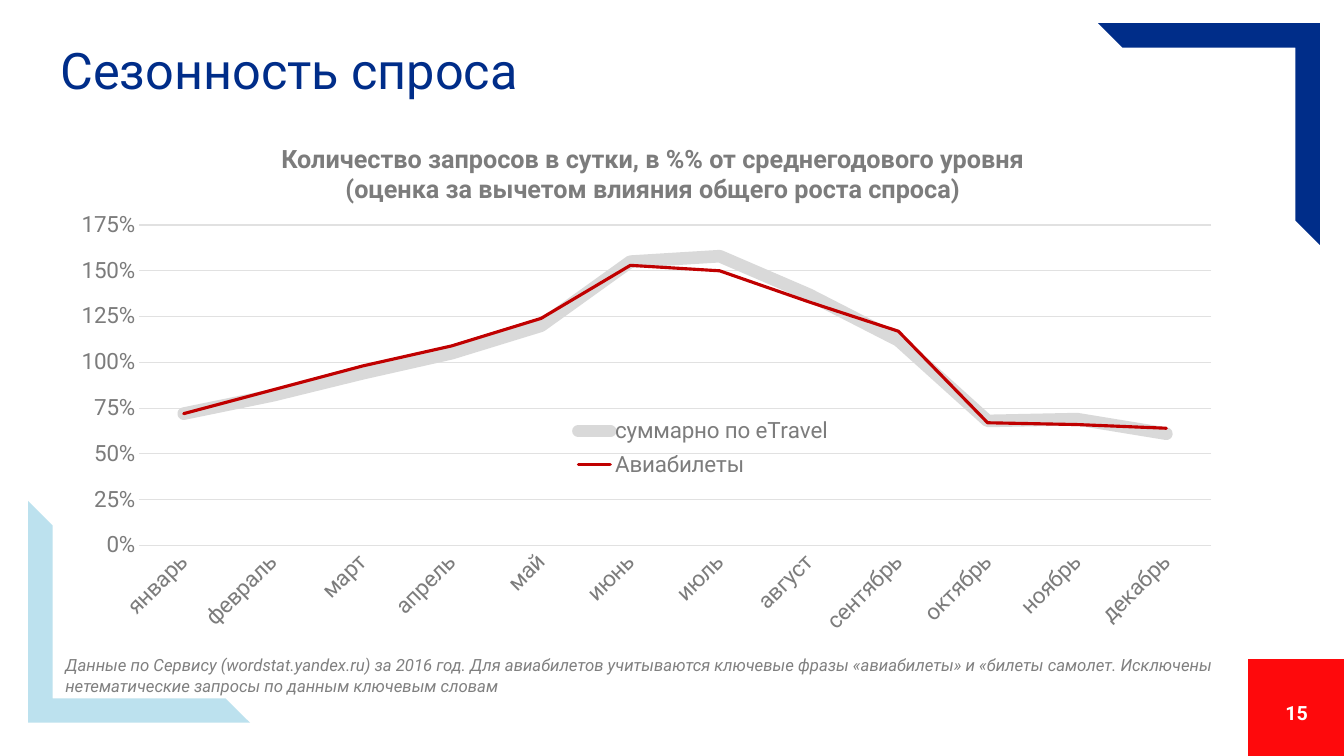
from lxml import etree
from pptx import Presentation
from pptx import util as u
from pptx.chart.data import CategoryChartData
from pptx.dml.color import RGBColor
from pptx.enum import chart as ch
from pptx.enum import shapes, text
from pptx.oxml import ns

FONT = "Roboto"
COLORS = {
    "navy": "002D89", "red": "FE090C", "sky": "BCE1EE", "white": "FFFFFF",
    "note": "808080", "label": "7C7C7C", "grid": "E1E1E1",
    "total": "D9D9D9", "flights": "C00000",
}
MONTHS = ["январь", "февраль", "март", "апрель", "май", "июнь", "июль",
          "август", "сентябрь", "октябрь", "ноябрь", "декабрь"]
# name, colour, line width in points, monthly values
DEMAND = [
    ("суммарно по eTravel", "total", 9,
     [0.72, 0.82, 0.94, 1.05, 1.2, 1.55, 1.58, 1.37, 1.12, 0.68, 0.69, 0.61]),
    ("Авиабилеты", "flights", 2.25,
     [0.72, 0.85, 0.98, 1.09, 1.24, 1.53, 1.5, 1.33, 1.17, 0.67, 0.66, 0.64]),
]


def color(name):
    return RGBColor.from_string(COLORS[name])


def inches(*lengths):
    return [u.Inches(length) for length in lengths]


def chart_layout(parent, index, x, y, w, h, inner=False):
    """Place a chart part by fractions of the chart's width and height."""
    for old in parent.findall(ns.qn("c:layout")):
        parent.remove(old)
    layout = etree.Element(ns.qn("c:layout"))
    manual = etree.SubElement(layout, ns.qn("c:manualLayout"))
    settings = [("layoutTarget", "inner")] if inner else []
    settings += [("xMode", "edge"), ("yMode", "edge"),
                 ("x", x), ("y", y), ("w", w), ("h", h)]
    for tag, value in settings:
        etree.SubElement(manual, ns.qn(f"c:{tag}"), val=str(value))
    parent.insert(index, layout)


class SlideBuilder:
    """Holds the style and the current slide."""

    def __init__(self, page):
        self.page = page

    def style(self, font, size, tint, bold=False, italic=False):
        font.name, font.size = FONT, u.Pt(size)
        font.bold, font.italic = bold, italic
        font.color.rgb = color(tint)

    def title(self, words, at):
        box = self.page.shapes.title
        box.left, box.top, box.width, box.height = inches(*at)
        box.text_frame.text = words
        box.text_frame.vertical_anchor = text.MSO_ANCHOR.MIDDLE
        para = box.text_frame.paragraphs[0]
        para.alignment = text.PP_ALIGN.LEFT
        para.line_spacing = 0.9
        self.style(para.font, 36, "navy")

    def shape(self, kind, at, fill, rotation=0, adjustments=()):
        item = self.page.shapes.add_shape(kind, *inches(*at))
        item.shadow.inherit = False
        item.fill.solid()
        item.fill.fore_color.rgb = color(fill)
        item.line.fill.background()
        item.rotation = rotation
        for index, value in enumerate(adjustments):
            item.adjustments[index] = value

    def text(self, lines, at, size, tint, align=text.PP_ALIGN.LEFT,
             anchor=text.MSO_ANCHOR.TOP, **look):
        frame = self.page.shapes.add_textbox(*inches(*at)).text_frame
        frame.word_wrap = True
        frame.vertical_anchor = anchor
        frame.text = "\n".join(lines)
        for para in frame.paragraphs:
            para.alignment = align
            self.style(para.font, size, tint, **look)

    def axis(self, axis, line=None):
        axis.major_tick_mark = axis.minor_tick_mark = ch.XL_TICK_MARK.NONE
        self.style(axis.tick_labels.font, 16, "label")
        if line:
            self.rule(axis.format.line, line, 0.75)
        else:
            axis.format.line.fill.background()

    def rule(self, line, tint, width):
        line.color.rgb = color(tint)
        line.width = u.Pt(width)

    def line_chart(self, at, categories, series):
        data = CategoryChartData(number_format="0%")
        data.categories = categories
        for name, _, _, values in series:
            data.add_series(name, values)
        chart = self.page.shapes.add_chart(
            ch.XL_CHART_TYPE.LINE, *inches(*at), data).chart
        chart.has_title = False
        self.style(chart.font, 10, "label")

        plot = chart.plots[0]
        plot.vary_by_categories = False
        for drawn, (_, tint, width, _) in zip(plot.series, series):
            drawn.smooth = False
            self.rule(drawn.format.line, tint, width)
            outline = next(drawn._element.iter(ns.qn("a:ln")))
            outline.set("cap", "rnd")
            etree.SubElement(outline, ns.qn("a:round"))

        months, share = chart.category_axis, chart.value_axis
        self.axis(months, "grid")
        label_body = next(months._element.iter(ns.qn("a:bodyPr")))
        label_body.set("rot", "-2700000")
        self.axis(share)
        share.minimum_scale, share.maximum_scale = 0, 1.75
        share.major_unit = 0.25
        share.tick_labels.number_format = "0%"
        share.tick_labels.number_format_is_linked = False
        self.rule(share.major_gridlines.format.line, "grid", 0.75)

        chart.has_legend = True
        legend = chart.legend
        legend.position = ch.XL_LEGEND_POSITION.BOTTOM
        legend.include_in_layout = False
        self.style(legend.font, 16, "label")
        chart_layout(legend._element, 1, 0.42, 0.47, 0.25, 0.17)
        plot_area = next(chart._chartSpace.iter(ns.qn("c:plotArea")))
        chart_layout(plot_area, 0, 0.074, 0.057, 0.895, 0.716, inner=True)


def main():
    deck = Presentation()
    deck.slide_width, deck.slide_height = inches(13.33, 7.5)
    builder = SlideBuilder(deck.slides.add_slide(deck.slide_layouts[5]))
    center, middle = text.PP_ALIGN.CENTER, text.MSO_ANCHOR.MIDDLE

    builder.shape(shapes.MSO_SHAPE.RECTANGLE, (12.38, 6.54, 0.96, 0.96), "red")
    for left, top, fill, rotation in [(0.28, 4.97, "sky", 270),
                                      (10.89, 0.23, "navy", 90)]:
        builder.shape(shapes.MSO_SHAPE.HALF_FRAME, (left, top, 2.2, 2.2),
                      fill, rotation, (0.11, 0.11))
    builder.title("Сезонность спроса", (0.5, 0.14, 11.74, 1.18))
    builder.text(["15"], (12.38, 6.87, 0.96, 0.4), 14, "white",
                 center, middle, bold=True)
    builder.line_chart((0.5, 1.98, 11.88, 4.44), MONTHS, DEMAND)
    builder.text(
        ["Данные по Сервису (wordstat.yandex.ru) за 2016 год. Для авиабилетов "
         "учитываются ключевые фразы «авиабилеты» и «билеты самолет. Исключены "
         "нетематические запросы по данным ключевым словам"],
        (0.55, 6.45, 11.85, 0.5), 12, "note", italic=True)
    builder.text(
        ["Количество запросов в сутки, в %% от среднегодового уровня",
         "(оценка за вычетом влияния общего роста спроса)"],
        (1.16, 1.37, 10.63, 0.71), 18, "label", center, bold=True)
    deck.save("out.pptx")


if __name__ == "__main__":
    main()
